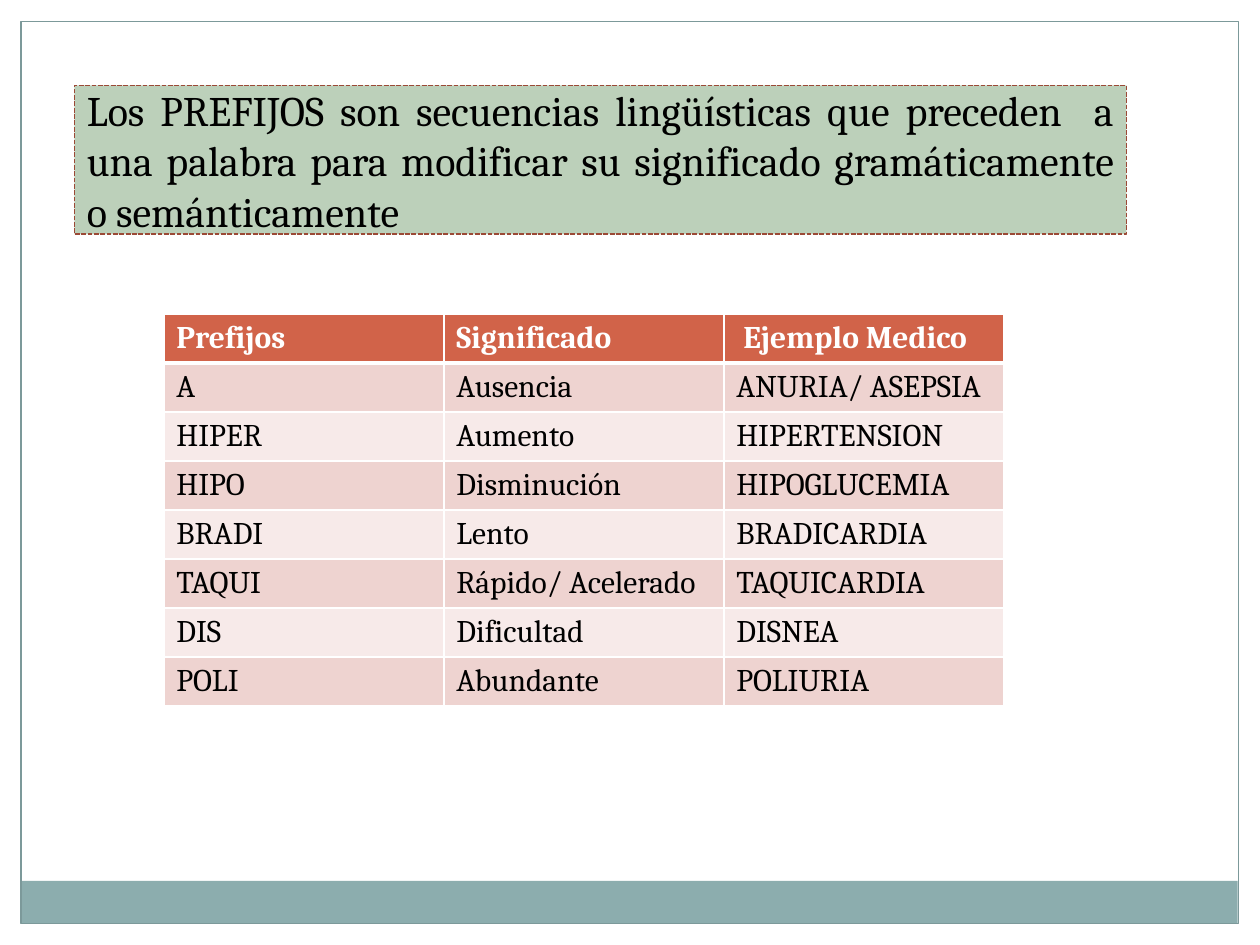
from pptx import Presentation
from pptx.dml.color import RGBColor
from pptx.enum.dml import MSO_LINE
from pptx.enum.shapes import MSO_SHAPE
from pptx.enum.text import MSO_ANCHOR, PP_ALIGN
from pptx.oxml import parse_xml
from pptx.oxml.ns import nsdecls
from pptx.util import Pt

COLORS = {
    "white": "FFFFFF", "black": "000000", "teal": "8CADAE", "frame": "7C999A",
    "green": "BCD0BA", "brown": "9B4936", "header": "D16349",
    "odd_row": "EED3D0", "even_row": "F7EAE9",
}


def add_rectangle(left, top, width, height, fill=None, line=None, line_width=0.75):
    shape = slide.shapes.add_shape(
        MSO_SHAPE.RECTANGLE, Pt(left), Pt(top), Pt(width), Pt(height))
    shape.shadow.inherit = False
    for target, color in ((shape.fill, fill), (shape.line.fill, line)):
        if color:
            target.solid()
            target.fore_color.rgb = RGBColor.from_string(COLORS[color])
        else:
            target.background()
    if line:
        shape.line.width = Pt(line_width)
    return shape


def write_text(text_frame, text, size, color, bold=False):
    paragraph = text_frame.paragraphs[0]
    run = paragraph.add_run()
    run.text = text
    font_format = {"name": "Cambria", "size": Pt(size), "bold": bold}
    for name, value in font_format.items():
        setattr(run.font, name, value)
    run.font.color.rgb = RGBColor.from_string(COLORS[color])
    return paragraph


presentation = Presentation()
presentation.slide_width = Pt(720)
presentation.slide_height = Pt(540)
slide = presentation.slides.add_slide(presentation.slide_layouts[6])

# Bottom band and page frame
add_rectangle(11.8, 503.3, 695.5, 24.4, fill="teal")
add_rectangle(12, 12.2, 695.8, 515.5, line="frame")

# Definition box
definition = add_rectangle(42.5, 48.8, 601.2, 85, "green", "brown", 0.9)
definition.line.dash_style = MSO_LINE.SQUARE_DOT
definition.text_frame.word_wrap = True
definition.text_frame.vertical_anchor = MSO_ANCHOR.MIDDLE
paragraph = write_text(
    definition.text_frame,
    "Los PREFIJOS son secuencias lingüísticas que preceden  a una palabra "
    "para modificar su significado gramáticamente o semánticamente ",
    24, "black")
paragraph.alignment = PP_ALIGN.JUSTIFY

# Prefix table
rows = [
    ("Prefijos", "Significado", " Ejemplo Medico"),
    ("A", "Ausencia", "ANURIA/ ASEPSIA"),
    ("HIPER", "Aumento", "HIPERTENSION"),
    ("HIPO", "Disminución", "HIPOGLUCEMIA"),
    ("BRADI", "Lento", "BRADICARDIA"),
    ("TAQUI", "Rápido/ Acelerado", "TAQUICARDIA"),
    ("DIS", "Dificultad", "DISNEA"),
    ("POLI", "Abundante", "POLIURIA"),
]
table = slide.shapes.add_table(
    len(rows), 3, Pt(93.6), Pt(179.5), Pt(480), Pt(26 * len(rows))).table

for row_index, row in enumerate(rows):
    is_header = row_index == 0
    fill = "header" if is_header else ("even_row", "odd_row")[row_index % 2]
    for column_index, text in enumerate(row):
        cell = table.cell(row_index, column_index)
        write_text(cell.text_frame, text, 18,
                   "white" if is_header else "black", is_header)

        # White cell borders, thicker between the header and the body
        thick_side = {0: "B", 1: "T"}.get(row_index)
        properties = cell._tc.get_or_add_tcPr()
        for side in "LRTB":
            width = Pt(3 if side == thick_side else 1)
            properties.append(parse_xml(
                f'<a:ln{side} {nsdecls("a")} w="{width}"><a:solidFill>'
                f'<a:srgbClr val="{COLORS["white"]}"/></a:solidFill></a:ln{side}>'))
        cell.fill.solid()
        cell.fill.fore_color.rgb = RGBColor.from_string(COLORS[fill])

presentation.save("out.pptx")
